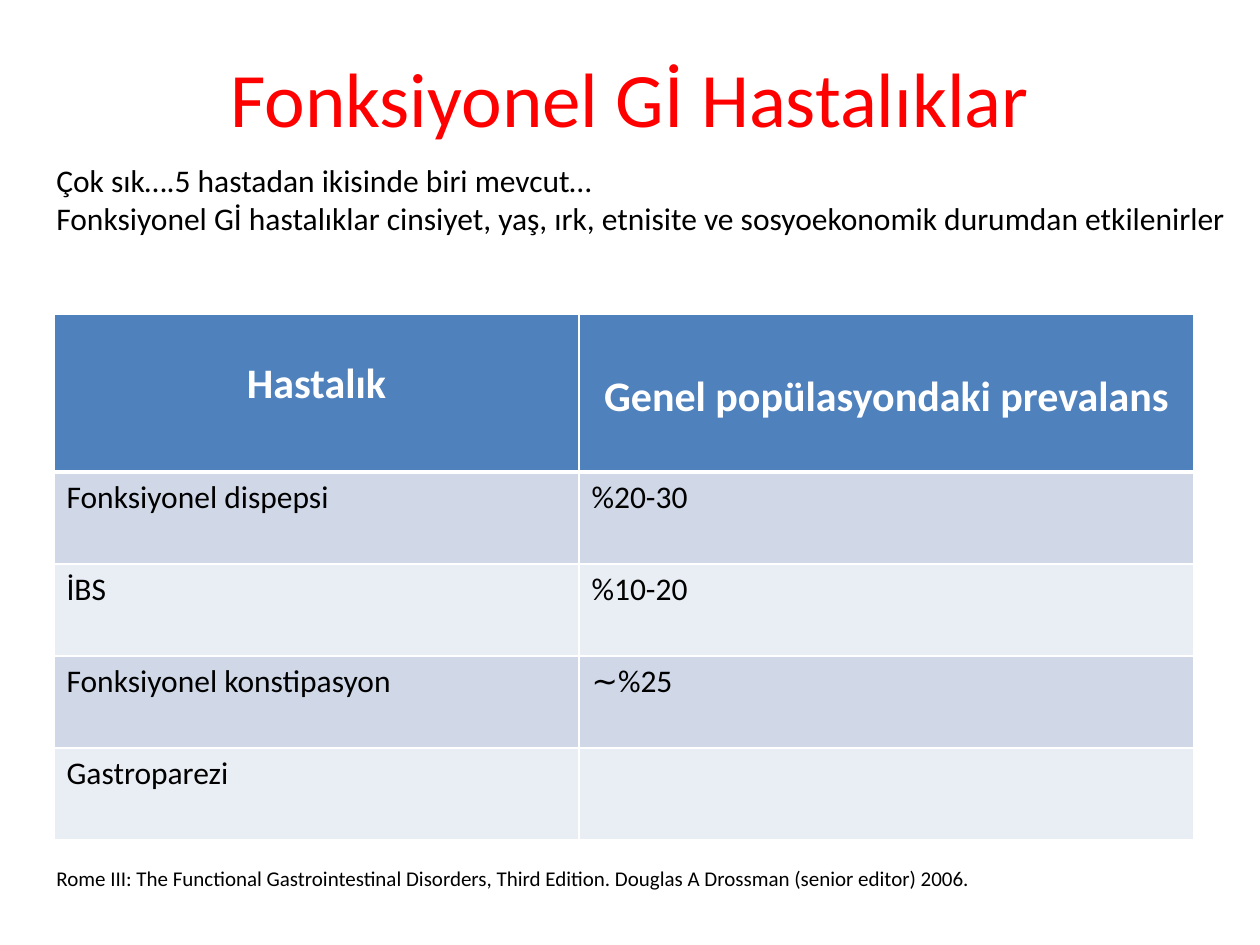
import pptx
import pptx.dml.color
import pptx.enum.text
import pptx.oxml
import pptx.oxml.ns
import pptx.util

SCALE = 914400 / 126
ALIGN = pptx.enum.text.PP_ALIGN
ANCHOR = pptx.enum.text.MSO_ANCHOR
AUTO_SIZE = pptx.enum.text.MSO_AUTO_SIZE
HEADER_FILL = "4F81BD"
BAND_FILLS = ("D0D8E8", "E9EDF4")
HEADERS = (("Hastalık", 45), ("Genel popülasyondaki prevalans", 58))
PREVALENCES = (
    ("Fonksiyonel dispepsi", "%20-30"),
    ("İBS", "%10-20"),
    ("Fonksiyonel konstipasyon", "∼%25"),
    ("Gastroparezi", ""),
)


def px(length):
    """Turn pixels into EMU."""
    return pptx.util.Emu(round(length * SCALE))


def color(value):
    """Turn a hex string into a colour."""
    return pptx.dml.color.RGBColor.from_string(value)


def write(frame, text, size=18, ink="000000", bold=False, align=ALIGN.LEFT):
    """Write each line of text as a formatted paragraph."""
    for index, line in enumerate(text.split("\n")):
        para = frame.add_paragraph() if index else frame.paragraphs[0]
        para.alignment = align
        para.font.size = pptx.util.Pt(size)
        if line:
            span = para.add_run()
            span.text = line
            span.font.name = "Calibri"
            span.font.size = pptx.util.Pt(size)
            span.font.bold = bold
            span.font.color.rgb = color(ink)


def add_title(page, left, top, width, height):
    """Place the centred red title in its box."""
    frame = page.shapes.add_textbox(px(left), px(top), px(width), px(height)).text_frame
    frame.word_wrap = True
    frame.vertical_anchor = ANCHOR.MIDDLE
    write(frame, "Fonksiyonel Gİ Hastalıklar", size=44, ink="FF0000", align=ALIGN.CENTER)


def add_note(page, text, left, top, width, height, size=18):
    """Place unwrapped text in a box that fits it."""
    frame = page.shapes.add_textbox(px(left), px(top), px(width), px(height)).text_frame
    frame.word_wrap = False
    frame.auto_size = AUTO_SIZE.SHAPE_TO_FIT_TEXT
    write(frame, text, size=size)


def set_borders(cell, bottom):
    """Draw white cell borders, with the bottom width in points."""
    properties = cell._tc.get_or_add_tcPr()
    widths = {"lnL": 1, "lnR": 1, "lnT": 1, "lnB": bottom}
    for index, (side, width) in enumerate(widths.items()):
        line = pptx.oxml.parse_xml(
            f'<a:{side} {pptx.oxml.ns.nsdecls("a")} w="{pptx.util.Pt(width)}">'
            f'<a:solidFill><a:srgbClr val="FFFFFF"/></a:solidFill></a:{side}>'
        )
        properties.insert(index, line)


def fill_cell(cell, fill, bottom=1):
    """Give a cell its fill and borders."""
    cell.fill.solid()
    cell.fill.fore_color.rgb = color(fill)
    set_borders(cell, bottom)


def add_prevalence_table(page, left, top, width, height):
    """Place the table of diseases and their prevalence."""
    table = page.shapes.add_table(
        len(PREVALENCES) + 1, len(HEADERS), px(left), px(top), px(width), px(height)
    ).table
    first_width, body_height = 525, 92
    table.columns[0].width = px(first_width)
    table.columns[1].width = px(width - first_width)
    table.rows[0].height = px(height - body_height * len(PREVALENCES))
    for column, (text, margin) in enumerate(HEADERS):
        cell = table.cell(0, column)
        fill_cell(cell, HEADER_FILL, bottom=3)
        cell.margin_top = px(margin)
        write(cell.text_frame, text, size=24, ink="FFFFFF", bold=True, align=ALIGN.CENTER)
    for row, texts in enumerate(PREVALENCES, 1):
        table.rows[row].height = px(body_height)
        for column, text in enumerate(texts):
            cell = table.cell(row, column)
            fill_cell(cell, BAND_FILLS[(row - 1) % 2])
            write(cell.text_frame, text)


def main():
    """Build and save the slide."""
    deck = pptx.Presentation()
    deck.slide_width, deck.slide_height = px(1260), px(945)
    page = deck.slides.add_slide(deck.slide_layouts[6])
    add_title(page, 63, 38, 1134, 117)
    add_prevalence_table(page, 54, 314, 1140, 526)
    add_note(
        page,
        "Rome III: The Functional Gastrointestinal Disorders, Third Edition. "
        "Douglas A Drossman (senior editor) 2006.",
        44, 859, 954, 38, size=12,
    )
    add_note(
        page,
        "Çok sık….5 hastadan ikisinde biri mevcut…\n"
        "Fonksiyonel Gİ hastalıklar cinsiyet, yaş, ırk, etnisite ve "
        "sosyoekonomik durumdan etkilenirler",
        44, 155, 1196, 89,
    )
    deck.save("out.pptx")


if __name__ == "__main__":
    main()
